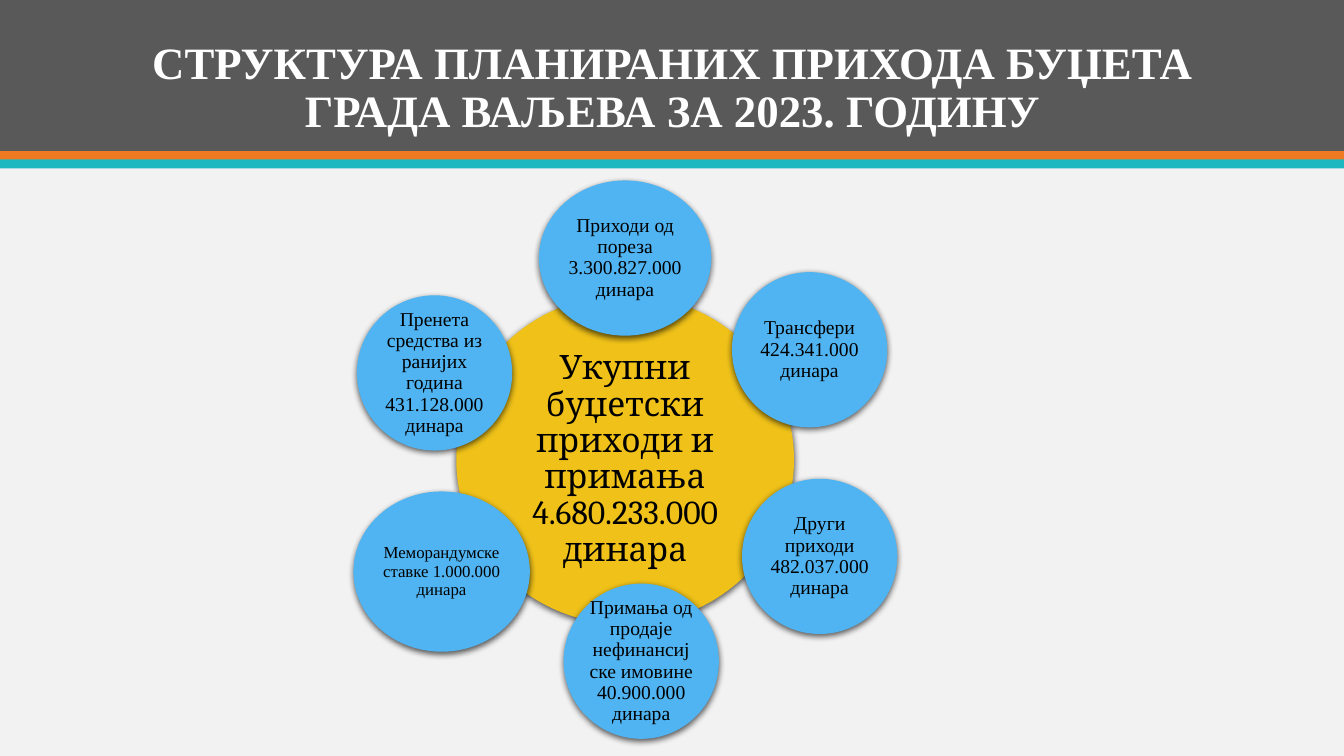
from lxml import etree
from pptx import Presentation
from pptx.dml.color import RGBColor
from pptx.enum.shapes import MSO_SHAPE
from pptx.enum.text import MSO_ANCHOR, PP_ALIGN
from pptx.oxml.ns import qn
from pptx.util import Inches, Pt

RECT, OVAL = MSO_SHAPE.RECTANGLE, MSO_SHAPE.OVAL
MIDDLE, BOTTOM = MSO_ANCHOR.MIDDLE, MSO_ANCHOR.BOTTOM
CENTER = PP_ALIGN.CENTER
SERIF = "Times New Roman"
WIDTH, HEIGHT = 13.33, 7.5


def add_filled(kind, left, top, width, height, color):
    s = slide.shapes.add_shape(kind, *map(Inches, (left, top, width, height)))
    s.shadow.inherit = False
    s.fill.solid()
    s.fill.fore_color.rgb = RGBColor.from_string(color)
    s.line.fill.background()
    return s


def write(s, text, color, anchor, inset, **font):
    """Set one centred paragraph in a shape, with font attributes as keywords."""
    tf = s.text_frame
    tf.word_wrap = True
    tf.vertical_anchor = anchor
    for side in ("left", "top", "right", "bottom"):
        setattr(tf, f"margin_{side}", Inches(inset))
    p = tf.paragraphs[0]
    p.alignment = CENTER
    p.line_spacing = 0.9
    r = p.add_run()
    r.text = text
    r.font.color.rgb = RGBColor.from_string(color)
    for name, value in font.items():
        setattr(r.font, name, value)


prs = Presentation()
prs.slide_width, prs.slide_height = Inches(WIDTH), Inches(HEIGHT)
slide = prs.slides.add_slide(prs.slide_layouts[6])
slide.background.fill.solid()
slide.background.fill.fore_color.rgb = RGBColor.from_string("F2F2F2")

# Header bands: top, height, colour
for top, height, color in [
    (0, 0.2 * HEIGHT, "595959"),
    (1.5, 0.09, "EF7920"),
    (1.58, 0.09, "1EB8C1"),
]:
    add_filled(RECT, 0, top, WIDTH, height, color)

title = slide.shapes.add_textbox(*map(Inches, (1.42, 0.28, 10.5, 1.13)))
write(title, "СТРУКТУРА ПЛАНИРАНИХ ПРИХОДА БУЏЕТА ГРАДА ВАЉЕВА ЗА 2023. ГОДИНУ",
      "FFFFFF", BOTTOM, 0.05, name=SERIF, size=Pt(32), bold=True)

# Circles: centre x, centre y, width, height, text, font size
total = (6.2, 4.56, 3.35, 3.27,
         "Укупни буџетски приходи и примања 4.680.233.000 динара", 24)
sources = [
    (6.2, 2.56, 1.71, 1.54, "Приходи од пореза 3.300.827.000 динара", 14),
    (8.03, 3.47, 1.54, 1.54, "Трансфери 424.341.000 динара", 14),
    (8.13, 5.52, 1.54, 1.54, "Други приходи 482.037.000 динара", 14),
    (6.36, 6.56, 1.54, 1.54,
     "Примања од продаје нефинансијске имовине 40.900.000 динара", 14),
    (4.38, 5.67, 1.75, 1.59, "Меморандумске ставке 1.000.000 динара", 12),
    (4.31, 3.7, 1.54, 1.54,
     "Пренета средства из ранијих година 431.128.000 динара", 14),
]
for circle in [total, *sources]:
    x, y, width, height, text, size = circle
    color, font, inset = (("EFC119", "Cambria", 0.03) if circle is total
                          else ("50B4F2", SERIF, 0.02))
    s = add_filled(OVAL, x - width / 2, y - height / 2, width, height, color)
    effects = s._element.spPr.find(qn("a:effectLst"))
    shadow = etree.SubElement(effects, qn("a:outerShdw"), blurRad=str(Pt(4.5)),
                              dist=str(Pt(1.5)), dir="5400000", rotWithShape="0")
    black = etree.SubElement(shadow, qn("a:srgbClr"), val="000000")
    etree.SubElement(black, qn("a:alpha"), val="63000")
    write(s, text, "000000", MIDDLE, inset, name=font, size=Pt(size))

prs.save("out.pptx")
